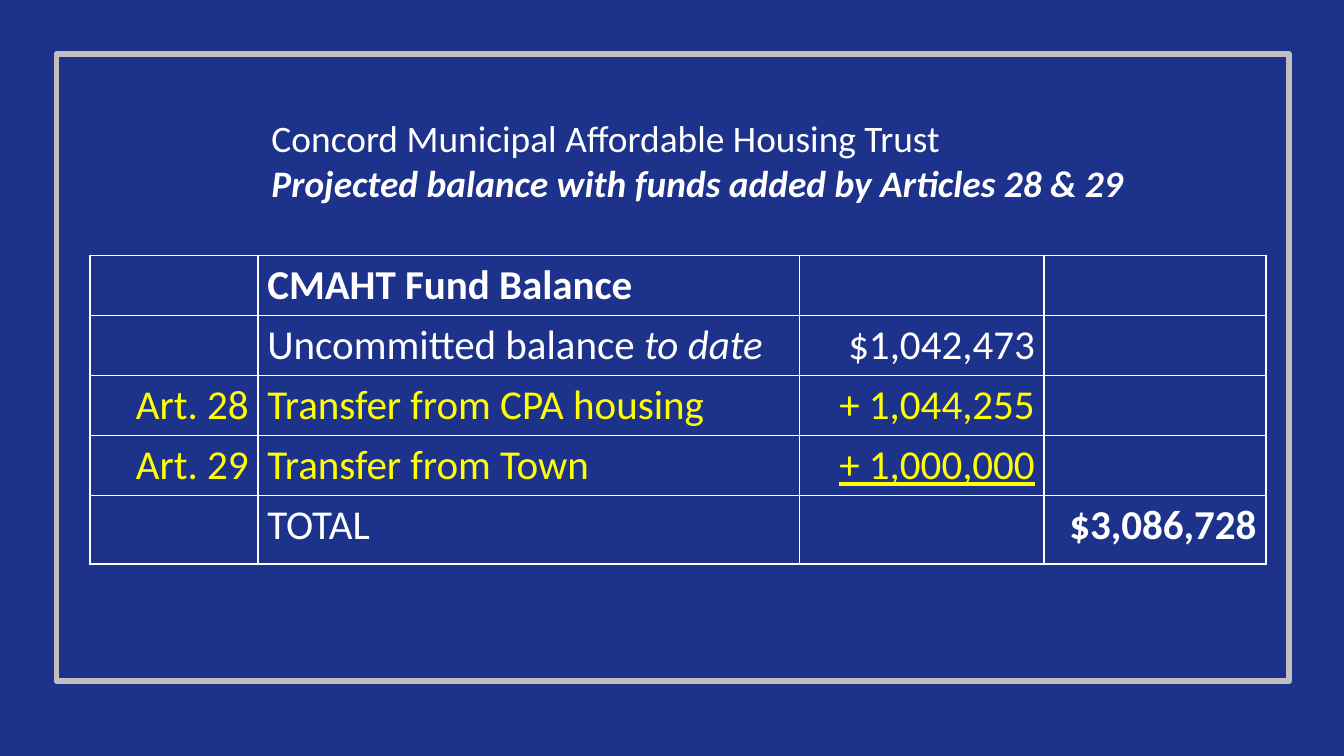
from pptx import Presentation
from pptx.dml.color import RGBColor
from pptx.enum.shapes import MSO_SHAPE
from pptx.enum.text import MSO_ANCHOR, MSO_AUTO_SIZE, PP_ALIGN
from pptx.oxml import parse_xml
from pptx.oxml.ns import nsdecls
from pptx.util import Inches, Pt

COLORS = {"background": "1D328B", "frame": "BFBFBF", "text": "FFFFFF", "article": "FFFF00"}
COLUMN_WIDTHS = [1.25, 4.03, 1.82, 1.65]
ROW_HEIGHTS = [0.44] * 4 + [0.51]
MARGINS = {"margin_left": 0.07, "margin_right": 0.07, "margin_top": 0.04, "margin_bottom": 0.04}

# Each cell is a list of runs: text and font format
ROWS = [
    [[], [("CMAHT Fund Balance", {"bold": True})], [], []],
    [[], [("Uncommitted balance ", {}), ("to date", {"italic": True})], [("$1,042,473", {})], []],
    [[("Art. 28", {})], [("Transfer from CPA housing", {})], [("+ 1,044,255", {})], []],
    [[("Art. 29", {})], [("Transfer from Town", {})], [("+ 1,000,000", {"underline": True})], []],
    [[], [("TOTAL", {})], [], [("$3,086,728", {"bold": True})]],
]


def add_run(paragraph, text, size, color, font_format):
    run = paragraph.add_run()
    run.text = text
    run.font.color.rgb = RGBColor.from_string(COLORS[color])
    for name, value in {"name": "Calibri", "size": Pt(size), **font_format}.items():
        setattr(run.font, name, value)


def add_borders(cell):
    properties = cell._tc.get_or_add_tcPr()
    for side in "LRTB":
        line = parse_xml(
            f'<a:ln{side} {nsdecls("a")} w="{Pt(1)}"><a:solidFill>'
            f'<a:srgbClr val="{COLORS["text"]}"/></a:solidFill></a:ln{side}>'
        )
        properties.append(line)


presentation = Presentation()
presentation.slide_width = Inches(10)
presentation.slide_height = presentation.slide_width * 9 // 16
slide = presentation.slides.add_slide(presentation.slide_layouts[5])
slide.background.fill.solid()
slide.background.fill.fore_color.rgb = RGBColor.from_string(COLORS["background"])

# Frame
frame = slide.shapes.add_shape(
    MSO_SHAPE.RECTANGLE, Inches(0.42), Inches(0.4), Inches(9.17), Inches(4.67)
)
frame.shadow.inherit = False
frame.fill.background()
frame.line.color.rgb = RGBColor.from_string(COLORS["frame"])
frame.line.width = Pt(3)

# Title
title = slide.shapes.title
for name, value in {"left": 1.92, "top": 0.81, "width": 6.67, "height": 0.77}.items():
    setattr(title, name, Inches(value))
title_frame = title.text_frame
title_frame.word_wrap = True
title_frame.auto_size = MSO_AUTO_SIZE.SHAPE_TO_FIT_TEXT
title_frame.vertical_anchor = MSO_ANCHOR.TOP
title_lines = [
    ("Concord Municipal Affordable Housing Trust", {}),
    ("Projected balance with funds added by Articles 28 & 29", {"bold": True, "italic": True}),
]
for index, (text, font_format) in enumerate(title_lines):
    paragraph = title_frame.add_paragraph() if index else title_frame.paragraphs[0]
    paragraph.alignment = PP_ALIGN.LEFT
    add_run(paragraph, text, 20, "text", font_format)

# Fund balance table
table = slide.shapes.add_table(
    len(ROWS), len(COLUMN_WIDTHS), Inches(0.67), Inches(1.9),
    Inches(sum(COLUMN_WIDTHS)), Inches(sum(ROW_HEIGHTS)),
).table
table.first_row = table.horz_banding = False
for column, width in zip(table.columns, COLUMN_WIDTHS):
    column.width = Inches(width)
for row, height in zip(table.rows, ROW_HEIGHTS):
    row.height = Inches(height)

for row_index, row in enumerate(ROWS):
    color = "article" if row[0] else "text"
    for column_index, runs in enumerate(row):
        cell = table.cell(row_index, column_index)
        add_borders(cell)
        cell.fill.background()
        for name, value in MARGINS.items():
            setattr(cell, name, Inches(value))
        paragraph = cell.text_frame.paragraphs[0]
        paragraph.alignment = PP_ALIGN.LEFT if column_index == 1 else PP_ALIGN.RIGHT
        for text, font_format in runs:
            add_run(paragraph, text, 22, color, font_format)

presentation.save("out.pptx")
